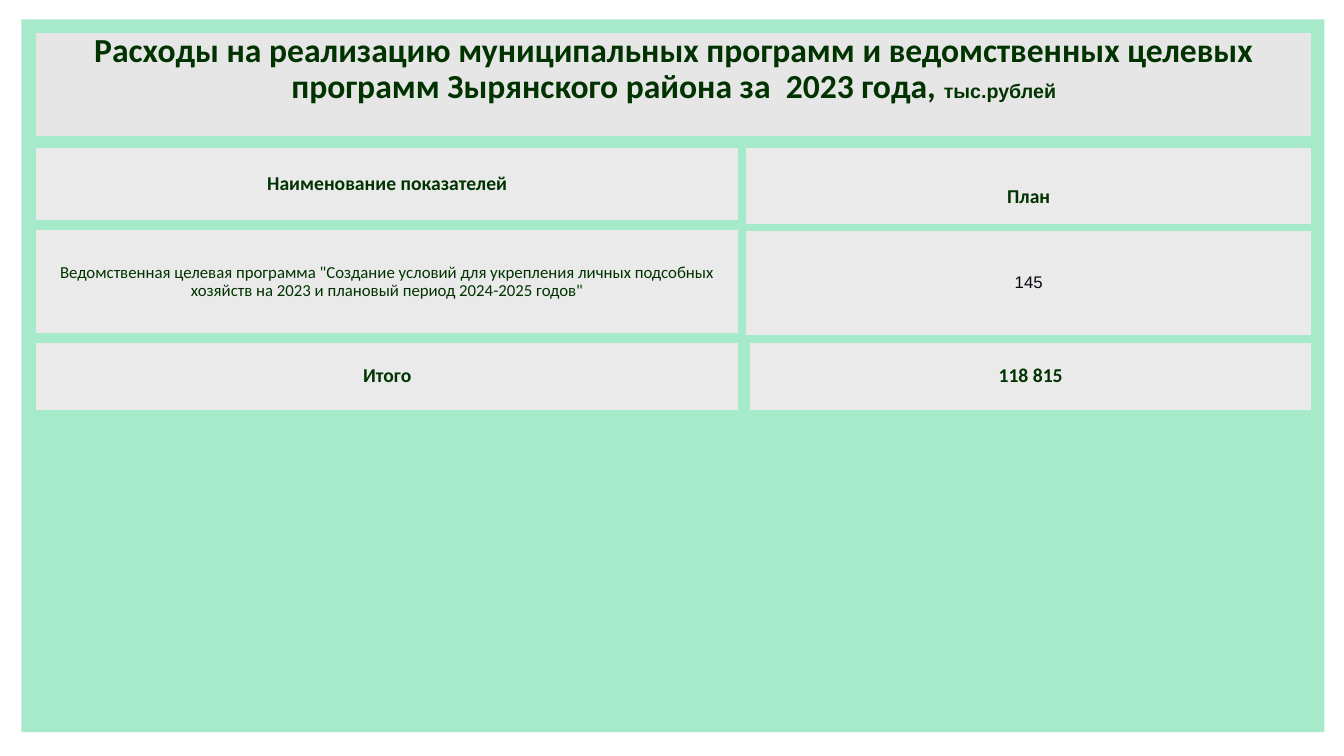
from pptx import Presentation
from pptx.dml.color import RGBColor
from pptx.enum.shapes import MSO_SHAPE
from pptx.enum.text import MSO_ANCHOR, PP_ALIGN
from pptx.util import Cm, Pt

COLORS = {
    "mint": "A7EACB",
    "title": "E7E6E6",
    "cell": "EAEAEA",
    "green": "003300",
    "ink": "060612",
}
LEFT = 0.91
RIGHT = 33.05
VALUE_LEFT = 18.8


def rgb(name):
    return RGBColor.from_string(COLORS[name])


def add_block(slide, kind, x, y, w, h, color):
    sp = slide.shapes.add_shape(kind, Cm(x), Cm(y), Cm(w), Cm(h))
    sp.shadow.inherit = False
    sp.fill.solid()
    sp.fill.fore_color.rgb = rgb(color)
    sp.line.fill.background()
    return sp


def add_run(p, text, size, font="Calibri", bold=True, color="green"):
    r = p.add_run()
    r.text = text
    r.font.size = Pt(size)
    r.font.name = font
    r.font.bold = bold
    r.font.color.rgb = rgb(color)


def add_panel(slide, x, y, w, h, color="cell", wrap=False, top=0.13, bottom=0.13):
    sp = add_block(slide, MSO_SHAPE.ACTION_BUTTON_CUSTOM, x, y, w, h, color)
    tf = sp.text_frame
    tf.word_wrap = wrap
    tf.vertical_anchor = MSO_ANCHOR.MIDDLE
    tf.margin_left = tf.margin_right = Cm(0.25)
    tf.margin_top, tf.margin_bottom = Cm(top), Cm(bottom)
    p = tf.paragraphs[0]
    p.alignment = PP_ALIGN.CENTER
    p.line_spacing = 0.9
    return p


def add_name(slide, y, h, text, size=14, bold=True, wrap=False):
    p = add_panel(slide, LEFT, y, 17.7, h, wrap=wrap)
    add_run(p, text, size, bold=bold)


def add_value(slide, y, h, text, x=VALUE_LEFT, top=0.13, size=14, **style):
    p = add_panel(slide, x, y, RIGHT - x, h, top=top)
    add_run(p, text, size, **style)


def add_title(slide):
    p = add_panel(slide, LEFT, 0.84, RIGHT - LEFT, 2.59, "title", True, 0, 0.76)
    add_run(p, "Расходы на реализацию муниципальных программ и ведомственных "
               "целевых программ Зырянского района за  2023 года, ", 24)
    add_run(p, "тыс.рублей", 14, "Arial")


def main():
    prs = Presentation()
    prs.slide_width, prs.slide_height = Cm(33.87), Cm(19.05)
    slide = prs.slides.add_slide(prs.slide_layouts[6])

    add_block(slide, MSO_SHAPE.RECTANGLE, 0.54, 0.49, 32.84, 17.96, "mint")
    add_title(slide)

    add_name(slide, 3.74, 1.81, "Наименование показателей")
    add_value(slide, 3.74, 1.91, "План", top=0.66)

    add_name(slide, 5.8, 2.6,
             'Ведомственная целевая программа "Создание условий для укрепления '
             'личных подсобных хозяйств на 2023 и плановый период 2024-2025 годов"',
             size=12, bold=False, wrap=True)
    add_value(slide, 5.82, 2.62, "145", size=12, font="Arial", bold=False, color="ink")

    add_name(slide, 8.65, 1.68, "Итого")
    add_value(slide, 8.65, 1.68, "118 815", x=18.9)

    prs.save("out.pptx")


if __name__ == "__main__":
    main()
